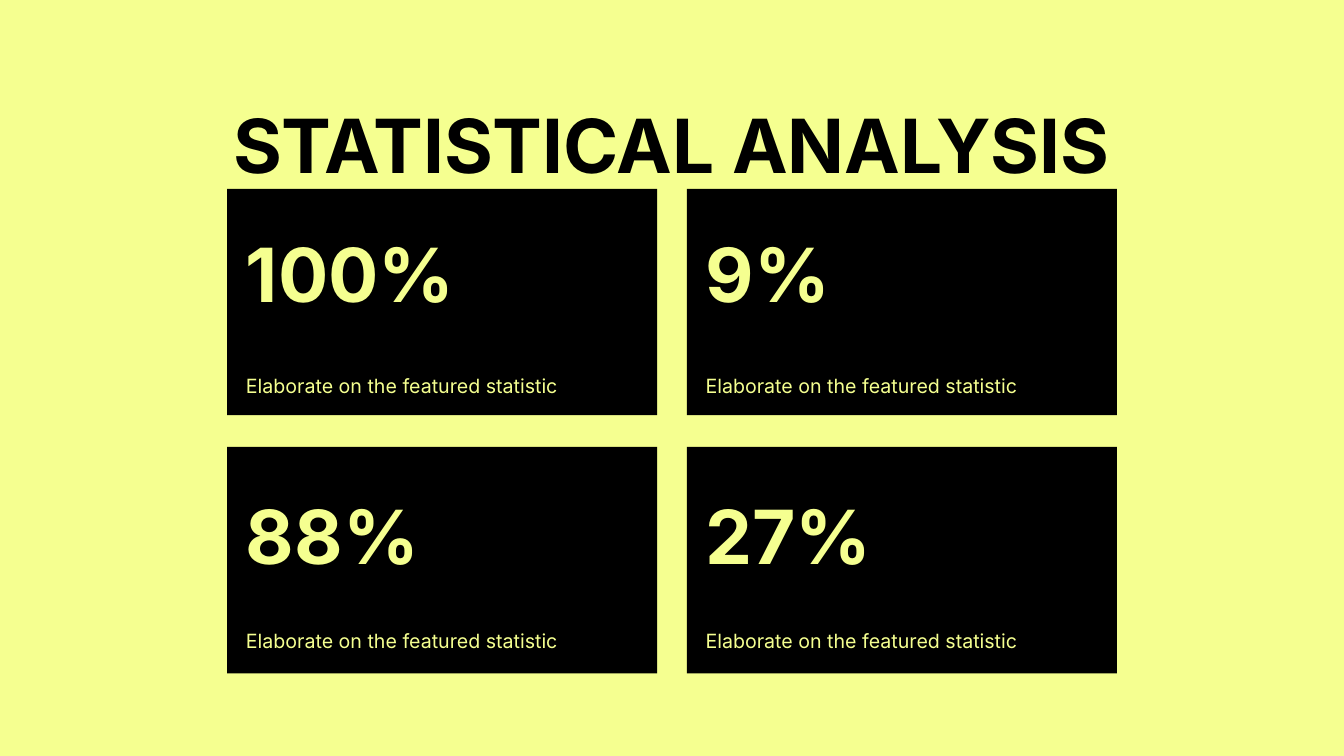
from pptx import Presentation
from pptx.dml.color import RGBColor
from pptx.enum.shapes import MSO_SHAPE
from pptx.enum.text import MSO_AUTO_SIZE, PP_ALIGN
from pptx.util import Inches, Pt


def color(code):
    return RGBColor.from_string(code)


class StatSlide:
    """Holds the style and the current slide, and draws its elements."""

    FONT = "Inter"
    LIME = "F5FF90"
    BLACK = "000000"
    LINE_SPACING = 1.2

    def __init__(self, deck):
        self.slide = deck.slides.add_slide(deck.slide_layouts[6])
        background = self.slide.background.fill
        background.solid()
        background.fore_color.rgb = color(self.LIME)

    def panel(self, left, top, width, height):
        panel = self.slide.shapes.add_shape(
            MSO_SHAPE.RECTANGLE, Inches(left), Inches(top), Inches(width), Inches(height)
        )
        panel.shadow.inherit = False
        panel.fill.solid()
        panel.fill.fore_color.rgb = color(self.BLACK)
        panel.line.fill.background()

    def text(self, words, left, top, width, height, size, ink, bold=False, align=PP_ALIGN.LEFT):
        box = self.slide.shapes.add_textbox(
            Inches(left), Inches(top), Inches(width), Inches(height)
        )
        frame = box.text_frame
        frame.word_wrap = True
        frame.auto_size = MSO_AUTO_SIZE.SHAPE_TO_FIT_TEXT
        frame.margin_left = frame.margin_right = frame.margin_top = frame.margin_bottom = 0
        frame.text = words
        paragraph = frame.paragraphs[0]
        paragraph.alignment = align
        paragraph.line_spacing = self.LINE_SPACING
        font = paragraph.runs[0].font
        font.name = self.FONT
        font.size = Pt(size)
        font.bold = bold
        font.color.rgb = color(ink)

    def title(self, words):
        self.text(words, 1.12, 1.2, 17.75, 1.35, 80, self.BLACK, True, PP_ALIGN.CENTER)

    def statistic(self, figure, caption, left, top, figure_top, caption_top):
        self.panel(left, top, 6.4, 3.37)
        inset = left + 0.28
        self.text(figure, inset, figure_top, 5.85, 1.35, 80, self.LIME, True)
        self.text(caption, inset, caption_top, 5.85, 0.35, 21, self.LIME)


def main():
    deck = Presentation()
    deck.slide_width, deck.slide_height = Inches(20), Inches(11.25)

    analysis = StatSlide(deck)
    caption = "Elaborate on the featured statistic"
    columns = (3.38, 10.22)
    rows = (
        (("100%", "9%"), (2.81, 3.13, 5.49)),
        (("88%", "27%"), (6.65, 7.02, 9.29)),
    )
    for figures, tops in rows:
        for figure, left in zip(figures, columns):
            analysis.statistic(figure, caption, left, *tops)
    analysis.title("STATISTICAL ANALYSIS")

    deck.save("out.pptx")


if __name__ == "__main__":
    main()
